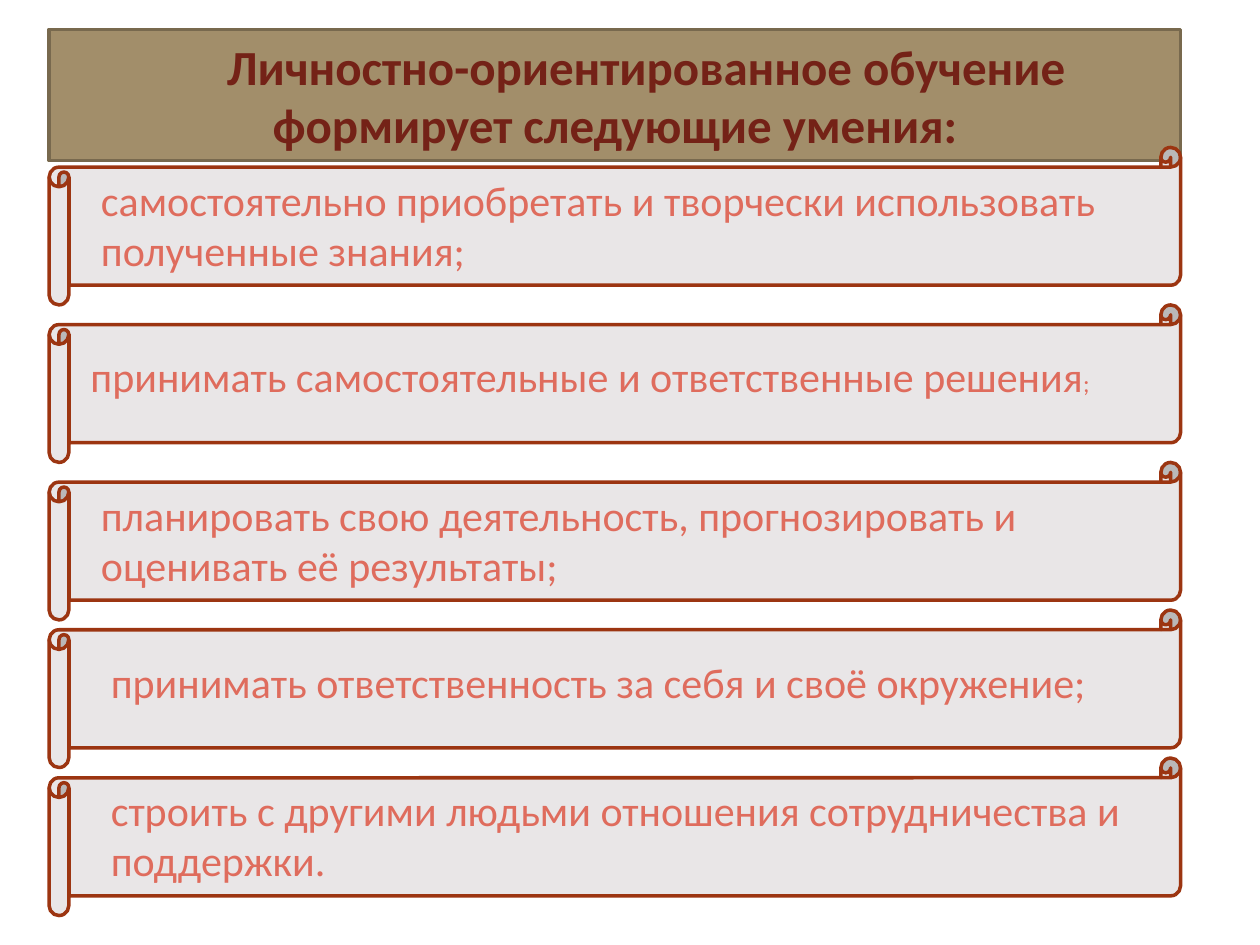
from pptx import Presentation
from pptx.dml.color import RGBColor
from pptx.enum.shapes import MSO_SHAPE
from pptx.enum.text import MSO_ANCHOR, MSO_AUTO_SIZE, PP_ALIGN
from pptx.util import Pt

COLORS = {
    "title_fill": "A28E6A",
    "title_line": "78694E",
    "title_text": "742217",
    "scroll_fill": "E9E6E7",
    "scroll_line": "9C3511",
    "skill_text": "DF6C5D",
}
LEFT, WIDTH, SCROLL_HEIGHT = 28.1, 646.5, 90
TITLE = "Личностно-ориентированное обучение формирует следующие умения:"
SKILLS = [
    (84.25, 22.5, 11.5, 584.6, 65.5,
     [("самостоятельно приобретать и творчески использовать полученные знания;", 24)]),
    (174.25, 16.5, 22.4, 618.5, 36.5,
     [("принимать самостоятельные и ответственные решения", 24), (";", 14)]),
    (264.25, 22.5, 11.5, 607.7, 65.5,
     [("планировать свою деятельность, прогнозировать и оценивать её результаты;", 24)]),
    (348.6, 28.1, 22.9, 602, 36.5,
     [("принимать ответственность за себя и своё окружение;", 24)]),
    (433.2, 28.1, 11.1, 602, 65.5,
     [("строить с другими людьми отношения сотрудничества и поддержки.", 24)]),
]


def color(name):
    """Return the named palette color."""
    return RGBColor.from_string(COLORS[name])


def add_panel(slide, preset, left, top, width, height, kind):
    """Add a filled and outlined preset shape in the colors of its kind."""
    shape = slide.shapes.add_shape(preset, Pt(left), Pt(top), Pt(width), Pt(height))
    shape.shadow.inherit = False
    shape.fill.solid()
    shape.fill.fore_color.rgb = color(kind + "_fill")
    shape.line.color.rgb = color(kind + "_line")
    shape.line.width = Pt(2)
    return shape


def write_text(shape, runs, color_name, bold=False):
    """Write one middle-anchored paragraph of (text, size) runs and return it."""
    frame = shape.text_frame
    frame.word_wrap = True
    frame.auto_size = MSO_AUTO_SIZE.SHAPE_TO_FIT_TEXT
    frame.vertical_anchor = MSO_ANCHOR.MIDDLE
    paragraph = frame.paragraphs[0]
    paragraph.font.name = "Calibri"
    paragraph.font.bold = bold
    paragraph.font.color.rgb = color(color_name)
    for text, size in runs:
        run = paragraph.add_run()
        run.text = text
        run.font.size = Pt(size)
        run.font.color.rgb = color(color_name)
    return paragraph


def add_title(slide, left, top, width, height):
    """Add the title bar with its indented, centred heading."""
    shape = add_panel(slide, MSO_SHAPE.RECTANGLE, left, top, width, height, "title")
    paragraph = write_text(shape, [(TITLE, 28)], "title_text", bold=True)
    paragraph.alignment = PP_ALIGN.CENTER
    paragraph._p.get_or_add_pPr().set("indent", str(Pt(35.4)))


def add_skill_text(slide, left, top, width, height, runs):
    """Add the text of one skill."""
    box = slide.shapes.add_textbox(Pt(left), Pt(top), Pt(width), Pt(height))
    paragraph = write_text(box, runs, "skill_text")
    paragraph.alignment = PP_ALIGN.LEFT


def add_skills(slide, left, width, height):
    """Add the column of scrolls, then the skill texts over them."""
    for top, *_ in SKILLS:
        add_panel(slide, MSO_SHAPE.HORIZONTAL_SCROLL, left, top, width, height, "scroll")
    for top, inset, drop, text_width, text_height, runs in SKILLS:
        add_skill_text(slide, left + inset, top + drop, text_width, text_height, runs)


def main():
    """Build and save the presentation."""
    presentation = Presentation()
    presentation.slide_width = Pt(720)
    presentation.slide_height = Pt(540)
    slide = presentation.slides.add_slide(presentation.slide_layouts[6])
    add_title(slide, LEFT, 16.75, WIDTH, 75)
    add_skills(slide, LEFT, WIDTH, SCROLL_HEIGHT)
    presentation.save("out.pptx")


if __name__ == "__main__":
    main()
